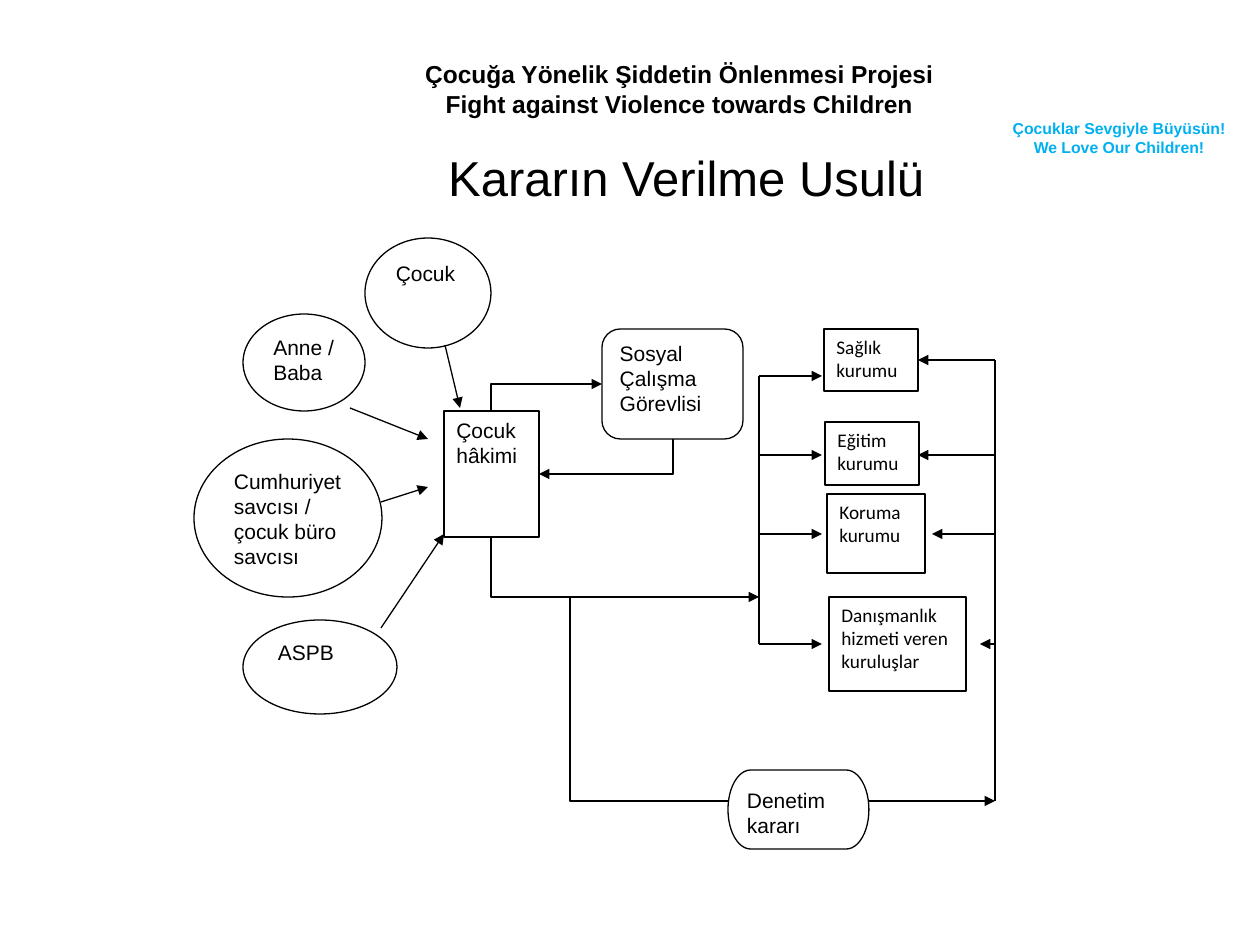
from lxml.etree import SubElement
from pptx import Presentation
from pptx.dml.color import RGBColor
from pptx.enum.shapes import MSO_CONNECTOR as LINK, MSO_SHAPE as SHAPE
from pptx.enum.text import MSO_ANCHOR as ANCHOR, MSO_AUTO_SIZE as FIT, PP_ALIGN as ALIGN
from pptx.oxml.ns import qn
from pptx.util import Inches, Pt

PX = Inches(1) / 126
COLORS = {"ink": "000000", "paper": "FFFFFF", "slogan": "00B0F0"}


def px(*lengths):
    return [round(n * PX) for n in lengths]


def rgb(name):
    return RGBColor.from_string(COLORS[name])


class Board:
    font, line_width = "Arial", Pt(0.75)

    def __init__(self, slide):
        self.slide = slide
        self.shapes = slide.shapes

    def set_text(self, frame, lines, size, color="ink", bold=False, align=ALIGN.LEFT,
                 font=None, after=0):
        frame.text = "\n".join(lines)
        for paragraph in frame.paragraphs:
            paragraph.alignment = align
            paragraph.space_after = Pt(after)
            style = paragraph.font
            style.name, style.size, style.bold = font or self.font, Pt(size), bold
            style.color.rgb = rgb(color)

    def title(self, box, text, size):
        heading = self.shapes.title
        heading.left, heading.top, heading.width, heading.height = px(*box)
        heading.text_frame.vertical_anchor = ANCHOR.MIDDLE
        self.set_text(heading.text_frame, [text], size, align=ALIGN.CENTER)

    def header(self, box, lines, size, color="ink"):
        frame = self.shapes.add_textbox(*px(*box)).text_frame
        frame.word_wrap = False
        frame.auto_size = FIT.SHAPE_TO_FIT_TEXT
        self.set_text(frame, lines, size, color, True, ALIGN.CENTER)

    def node(self, kind, box, text, size=12, **style):
        shape = self.shapes.add_shape(kind, *px(*box))
        shape.shadow.inherit = False
        shape.fill.solid()
        shape.fill.fore_color.rgb = rgb("paper")
        shape.line.color.rgb = rgb("ink")
        shape.line.width = self.line_width
        shape.text_frame.word_wrap = True
        shape.text_frame.vertical_anchor = ANCHOR.TOP
        self.set_text(shape.text_frame, [text], size, **style)
        return shape

    def link(self, x1, y1, x2, y2, arrow=True):
        link = self.shapes.add_connector(LINK.STRAIGHT, *px(x1, y1, x2, y2))
        link.line.color.rgb = rgb("ink")
        link.line.width = self.line_width
        properties = link._element.spPr
        if arrow:
            SubElement(properties.find(qn("a:ln")), qn("a:tailEnd"), type="triangle")
        SubElement(properties, qn("a:effectLst"))
        return link

    def elbow(self, x1, y1, x2, y2):
        """Arrow that runs vertically first, then horizontally."""
        run, rise = abs(x2 - x1), abs(y2 - y1)
        left, top = (x1 + x2 - rise) / 2, (y1 + y2 - run) / 2
        link = self.link(left, top, left + rise, top + run)
        properties = link._element.spPr
        properties.find(qn("a:prstGeom")).set("prst", "bentConnector2")
        frame = properties.find(qn("a:xfrm"))
        frame.set("rot", str((270 if x2 > x1 else 90) * 60000))
        if x2 > x1 and y2 > y1:
            frame.set("flipH", "1")


def main():
    deck = Presentation()
    deck.slide_width, deck.slide_height = px(1260, 945)
    board = Board(deck.slides.add_slide(deck.slide_layouts[5]))

    # Headings
    board.header((412, 53, 535, 72), ["Çocuğa Yönelik Şiddetin Önlenmesi Projesi",
                                      "Fight against Violence towards Children"], 14)
    board.header((999, 113, 240, 50), ["Çocuklar Sevgiyle Büyüsün!",
                                       "We Love Our Children!"], 9, "slogan")
    board.title((126, 98, 1134, 158), "Kararın Verilme Usulü ", 28)

    # Applicants and their arrows to the judge
    for box, applicant, arrow in [
        ((365, 238, 126, 110), "Çocuk", (445, 345, 460, 408)),
        ((243, 314, 122, 97), "Anne / Baba", (350, 408, 428, 439)),
        ((194, 439, 188, 158), "Cumhuriyet savcısı / çocuk büro savcısı",
         (381, 502, 428, 487)),
        ((243, 620, 154, 94), "ASPB", (381, 628, 444, 534)),
    ]:
        board.node(SHAPE.OVAL, box, applicant)
        board.link(*arrow)

    # Judge and social worker
    board.node(SHAPE.ROUNDED_RECTANGLE, (602, 329, 141, 110), "Sosyal Çalışma Görevlisi")
    board.node(SHAPE.FLOWCHART_PROCESS, (444, 411, 95, 126), "Çocuk hâkimi")
    board.elbow(491, 411, 602, 384)
    board.elbow(673, 439, 539, 474)

    # Decision rail on the left of the institutions
    rail, review = 759, 995
    board.elbow(491, 537, rail, 597)
    board.link(rail, 376, rail, 644, arrow=False)
    for y in (376, 455, 534, 644):
        board.link(rail, y, 822, y)

    # Review rail on the right of the institutions
    board.elbow(570, 597, review, 801)
    board.link(review, 801, review, 360, arrow=False)
    to_health, *_ = [board.link(review, y, tip, y) for y, tip in
                     [(360, 918), (455, 918), (534, 932), (644, 980)]]
    board.node(SHAPE.FLOWCHART_TERMINATOR, (728, 770, 141, 79), "Denetim kararı")

    # Institutions
    health, *_ = [board.node(SHAPE.RECTANGLE, box, name, 11, font="Calibri", after=10)
                  for box, name in [
                      ((824, 329, 94, 62), "Sağlık kurumu"),
                      ((825, 422, 94, 63), "Eğitim kurumu"),
                      ((827, 494, 98, 79), "Koruma kurumu"),
                      ((829, 597, 137, 94), "Danışmanlık hizmeti veren kuruluşlar")]]
    to_health.end_connect(health, 3)

    deck.save("out.pptx")


if __name__ == "__main__":
    main()
